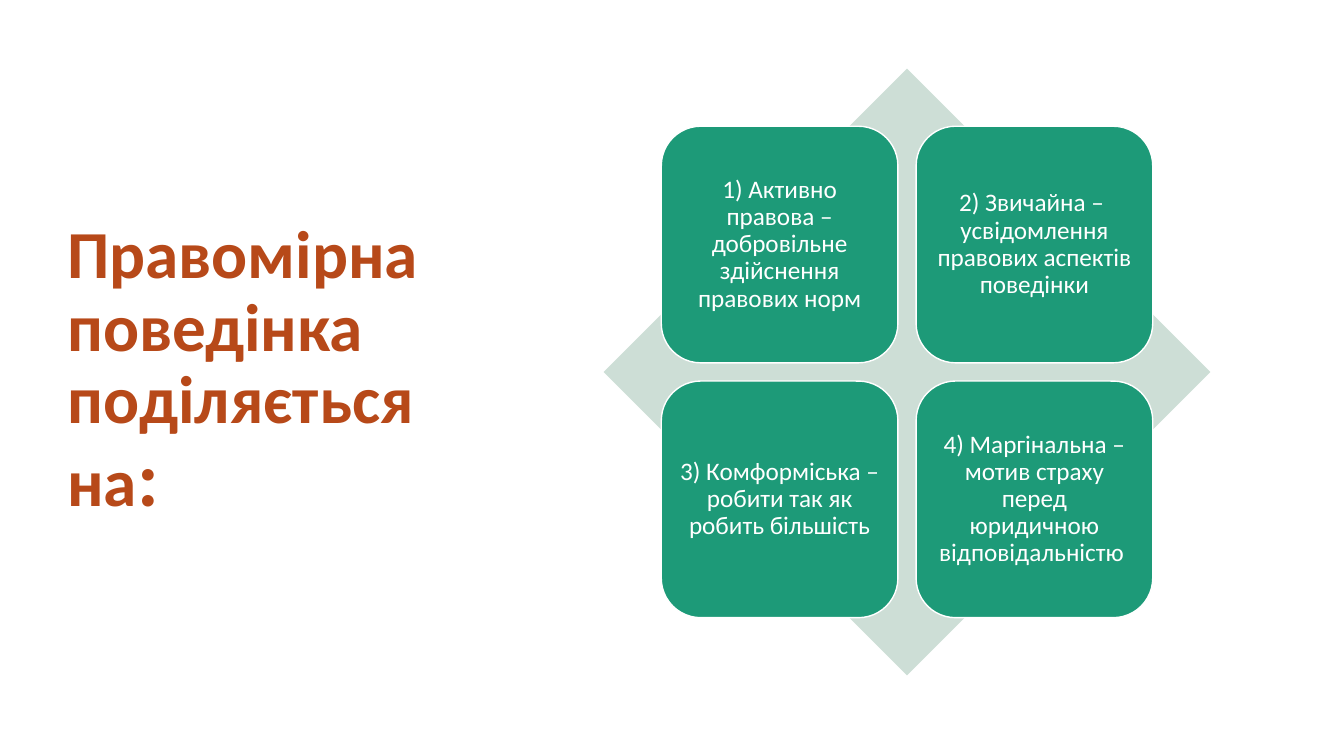
import pptx
import pptx.dml.color
import pptx.enum.shapes
import pptx.enum.text
import pptx.util

SHAPES = pptx.enum.shapes.MSO_SHAPE
ALIGN = pptx.enum.text.PP_ALIGN
COLOURS = {"title": "B74919", "diamond": "CDDED6", "card": "1D9A78", "white": "FFFFFF"}
FONT = "Calibri"


def colour(name):
    return pptx.dml.color.RGBColor.from_string(COLOURS[name])


def write_text(frame, paragraphs, size, color, align, bold=False, inset=None, space_after=0):
    frame.word_wrap = True
    frame.vertical_anchor = pptx.enum.text.MSO_ANCHOR.MIDDLE
    if inset is not None:
        frame.margin_left = frame.margin_right = pptx.util.Pt(inset)
        frame.margin_top = frame.margin_bottom = pptx.util.Pt(inset)
    for index, runs in enumerate(paragraphs):
        paragraph = frame.add_paragraph() if index else frame.paragraphs[0]
        paragraph.alignment = align
        paragraph.line_spacing = 0.9
        paragraph.space_after = pptx.util.Pt(space_after)
        for text, run_size in runs:
            run = paragraph.add_run()
            run.text = text
            run.font.name = FONT
            run.font.size = pptx.util.Pt(run_size or size)
            run.font.bold = bold
            run.font.color.rgb = colour(color)


class SlideBuilder:
    def __init__(self, slide):
        self.slide = slide

    def text_box(self, left, top, width, height, paragraphs, **text_format):
        box = self.slide.shapes.add_textbox(*map(pptx.util.Pt, (left, top, width, height)))
        write_text(box.text_frame, paragraphs, **text_format)

    def shape(self, kind, left, top, side, fill, line=None):
        shape = self.slide.shapes.add_shape(kind, *map(pptx.util.Pt, (left, top, side, side)))
        shape.shadow.inherit = False
        shape.fill.solid()
        shape.fill.fore_color.rgb = colour(fill)
        if line:
            shape.line.color.rgb = colour(line)
            shape.line.width = pptx.util.Pt(1)
        else:
            shape.line.fill.background()
        return shape

    def card(self, left, top, side, text):
        card = self.shape(SHAPES.ROUNDED_RECTANGLE, left, top, side, "card", line="white")
        write_text(card.text_frame, [[(text, None)]], size=18, color="white",
                   align=ALIGN.CENTER, inset=5, space_after=6.3)


def main():
    presentation = pptx.Presentation()
    presentation.slide_width = pptx.util.Pt(960)
    presentation.slide_height = pptx.util.Pt(540)
    builder = SlideBuilder(presentation.slides.add_slide(presentation.slide_layouts[6]))

    top, diamond_side = 49, 433.4
    builder.text_box(
        41, top, 324, diamond_side,
        [[("Правомірна поведінка", None)], [("поділяється на", None), (": ", 56)]],
        size=48, color="title", align=ALIGN.JUSTIFY, bold=True)

    diamond_left = 431.2
    builder.shape(SHAPES.DIAMOND, diamond_left, top, diamond_side, "diamond")

    behaviours = [
        "1) Активно правова – добровільне здійснення правових норм",
        "2) Звичайна –  усвідомлення правових аспектів поведінки",
        "3) Комформіська – робити так як робить більшість",
        "4) Маргінальна – мотив страху перед юридичною відповідальністю ",
    ]
    card_side, step = 169, 182
    margin = (diamond_side - card_side - step) / 2
    for index, text in enumerate(behaviours):
        row, column = divmod(index, 2)
        builder.card(diamond_left + margin + column * step, top + margin + row * step,
                     card_side, text)

    presentation.save("out.pptx")


if __name__ == "__main__":
    main()
